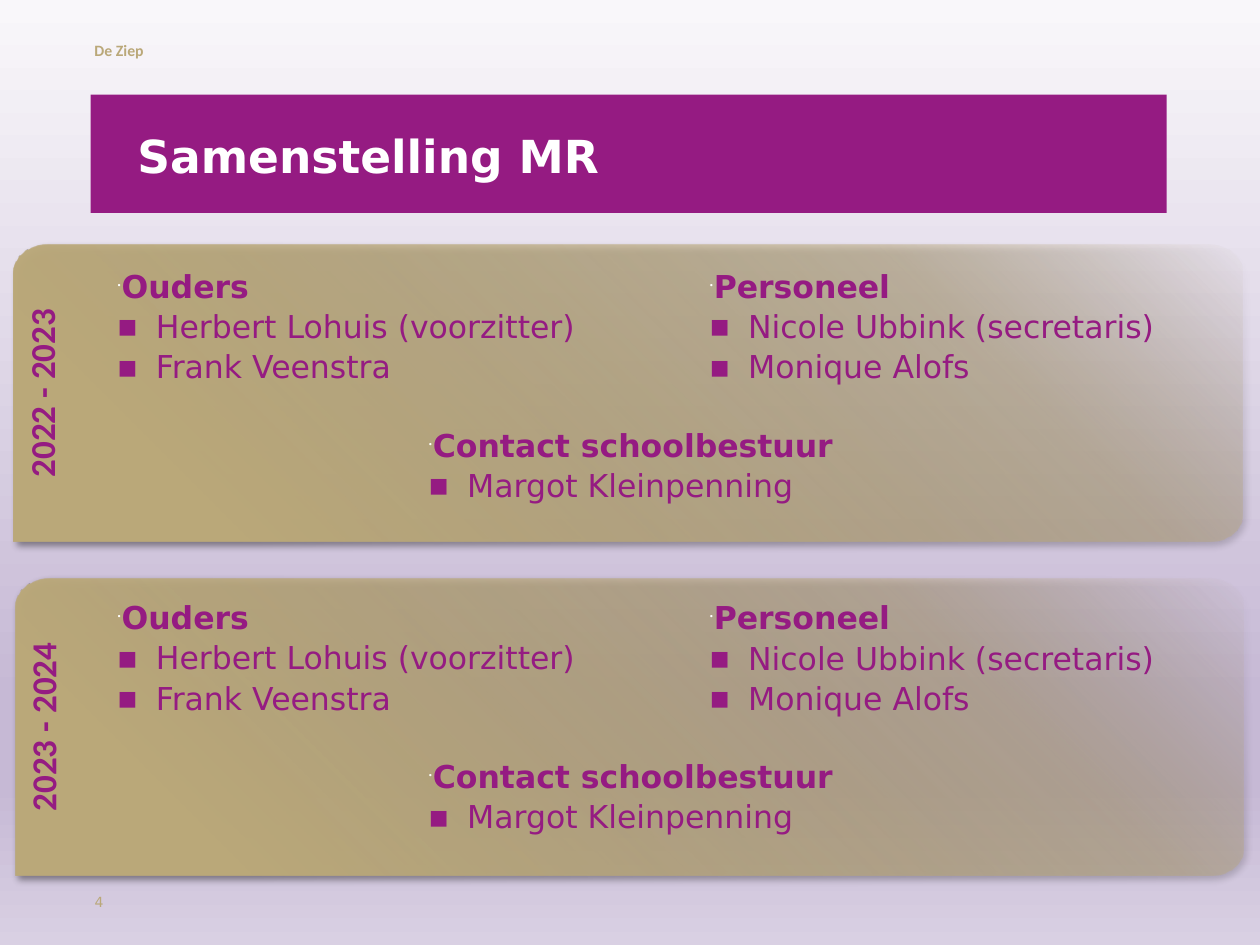
from dataclasses import dataclass
from math import cos, pi, sin

from lxml.etree import SubElement
from pptx import Presentation
from pptx.dml.color import RGBColor
from pptx.enum.text import MSO_ANCHOR, MSO_AUTO_SIZE, PP_ALIGN
from pptx.oxml import parse_xml
from pptx.oxml.ns import nsdecls, qn
from pptx.util import Inches, Pt


@dataclass(frozen=True)
class Theme:
    purple: str = "951B82"
    gold: str = "BAA879"
    white: str = "FFFFFF"
    black: str = "000000"
    label_font: str = "Calibri"
    body_font: str = "DejaVu Sans"
    title_size: int = 26
    year_size: int = 20
    body_size: int = 18
    header_size: int = 9
    number_size: int = 8
    body_line: int = 23


@dataclass(frozen=True)
class Stop:
    position: int
    color: str
    opacity: int = 100


@dataclass(frozen=True)
class Group:
    heading: str
    members: tuple[str, ...]
    left: float
    offset: float
    width: float
    height: float


@dataclass(frozen=True)
class Panel:
    years: str
    left: float
    top: float
    groups_top: float


THEME = Theme()
PANEL_WIDTH, PANEL_HEIGHT = 9.75, 2.36
CORNER_WIDTH, CORNER_HEIGHT = 0.27, 0.22
BACKGROUND = (Stop(0, "F9F7FA"), Stop(74, "C6B9D5"), Stop(83, "C6B9D5"), Stop(100, "D9D0E3"))
PANEL_FILL = (Stop(15, THEME.gold), Stop(76, THEME.gold, 50), Stop(100, THEME.gold, 0))
DOWNWARD = '<a:lin ang="5400000" scaled="0"/>'
FROM_BOTTOM_LEFT = '<a:path path="circle"><a:fillToRect t="100000" r="100000"/></a:path>'
PANELS = (
    Panel("2022 - 2023", 0.11, 1.94, 2.05),
    Panel("2023 - 2024", 0.12, 4.59, 4.68),
)
GROUPS = (
    Group("Ouders", ("Herbert Lohuis (voorzitter)", "Frank Veenstra"), 0.83, 0, 3.9, 1.07),
    Group("Personeel", ("Nicole Ubbink (secretaris)", "Monique Alofs"), 5.53, 0, 3.9, 1.28),
    Group("Contact schoolbestuur", ("Margot Kleinpenning",), 3.3, 1.26, 4.08, 1.01),
)


def write(paragraph, text: str, *, size: int, color: str, font: str,
          bold: bool = False, align=PP_ALIGN.LEFT):
    run = paragraph.add_run()
    run.text = text
    run.font.size = Pt(size)
    run.font.name = font
    run.font.bold = bold
    run.font.color.rgb = RGBColor.from_string(color)
    paragraph.alignment = align
    return run


def set_margins(frame, left: float, top: float, right: float, bottom: float) -> None:
    frame.margin_left, frame.margin_top = Inches(left), Inches(top)
    frame.margin_right, frame.margin_bottom = Inches(right), Inches(bottom)


def add_text_box(slide, left: float, top: float, width: float, height: float):
    frame = slide.shapes.add_textbox(
        Inches(left), Inches(top), Inches(width), Inches(height)).text_frame
    frame.word_wrap = True
    return frame


def apply_gradient(fill, parent, stops: tuple[Stop, ...], direction: str) -> None:
    """Put a gradient where the solid fill of parent would be."""
    fill.solid()
    stop_xml = "".join(
        f'<a:gs pos="{stop.position * 1000}"><a:srgbClr val="{stop.color}">'
        f'<a:alpha val="{stop.opacity * 1000}"/></a:srgbClr></a:gs>' for stop in stops)
    gradient = parse_xml(
        f'<a:gradFill {nsdecls("a")} rotWithShape="1"><a:gsLst>{stop_xml}</a:gsLst>'
        f'{direction}</a:gradFill>')
    parent.replace(parent.find(qn("a:solidFill")), gradient)


def add_bullet(paragraph, character: str, color: str, *, percent: int = 100,
               indent: float = 0) -> None:
    properties = paragraph._p.get_or_add_pPr()
    properties.set("marL", str(Inches(indent)))
    properties.set("indent", str(-Inches(indent)))
    SubElement(SubElement(properties, qn("a:buClr")), qn("a:srgbClr")).set("val", color)
    SubElement(properties, qn("a:buSzPct")).set("val", str(percent * 1000))
    SubElement(properties, qn("a:buFont")).set("typeface", THEME.body_font)
    SubElement(properties, qn("a:buChar")).set("char", character)


def panel_outline(panel: Panel) -> list[tuple[int, int]]:
    """Points clockwise from the bottom left, the one square corner."""
    right, bottom = panel.left + PANEL_WIDTH, panel.top + PANEL_HEIGHT
    inner_left, inner_right = panel.left + CORNER_WIDTH, right - CORNER_WIDTH
    inner_top, inner_bottom = panel.top + CORNER_HEIGHT, bottom - CORNER_HEIGHT
    corners = ((inner_left, inner_top, pi), (inner_right, inner_top, 1.5 * pi),
               (inner_right, inner_bottom, 0))
    steps = 12
    points = [(panel.left, bottom)]
    for x, y, start in corners:
        for step in range(steps + 1):
            angle = start + step * pi / 2 / steps
            points.append((x + CORNER_WIDTH * cos(angle), y + CORNER_HEIGHT * sin(angle)))
    return [(Inches(x), Inches(y)) for x, y in points]


def add_panel(slide, panel: Panel) -> None:
    start, *others = panel_outline(panel)
    builder = slide.shapes.build_freeform(*start)
    builder.add_line_segments(others, close=True)
    shape = builder.convert_to_shape()
    properties = shape._element.spPr
    apply_gradient(shape.fill, properties, PANEL_FILL, FROM_BOTTOM_LEFT)
    shape.line.fill.background()
    shape.shadow.inherit = False
    properties.find(qn("a:effectLst")).append(parse_xml(
        f'<a:outerShdw {nsdecls("a")} blurRad="{Pt(4)}" dist="{Pt(3)}" dir="2700000" '
        f'algn="tl" rotWithShape="0"><a:srgbClr val="{THEME.black}">'
        '<a:alpha val="40000"/></a:srgbClr></a:outerShdw>'))

    frame = shape.text_frame
    frame._txBody.bodyPr.set("vert", "vert270")
    frame.vertical_anchor = MSO_ANCHOR.TOP
    set_margins(frame, 0.1, 0.05, 0.1, 0.05)
    run = write(frame.paragraphs[0], panel.years, size=THEME.year_size, color=THEME.purple,
                font=THEME.label_font, bold=True, align=PP_ALIGN.CENTER)
    run._r.get_or_add_rPr().insert(0, parse_xml(
        f'<a:ln {nsdecls("a")} w="{Pt(0.75)}"><a:solidFill>'
        f'<a:srgbClr val="{THEME.purple}"/></a:solidFill></a:ln>'))


def add_group(slide, group: Group, top: float) -> None:
    frame = add_text_box(slide, group.left, top + group.offset, group.width, group.height)
    for index, text in enumerate((group.heading, *group.members)):
        is_heading = index == 0
        paragraph = frame.paragraphs[0] if is_heading else frame.add_paragraph()
        if is_heading:
            add_bullet(paragraph, "•", THEME.white, percent=25)
        else:
            add_bullet(paragraph, "▪", THEME.purple, indent=0.31)
        paragraph.line_spacing = Pt(THEME.body_line)
        write(paragraph, text, size=THEME.body_size, color=THEME.purple,
              font=THEME.body_font, bold=is_heading)


def format_title(title, text: str) -> None:
    title.left, title.top = Inches(0.72), Inches(0.75)
    title.width, title.height = Inches(8.54), Inches(0.94)
    title.fill.solid()
    title.fill.fore_color.rgb = RGBColor.from_string(THEME.purple)
    frame = title.text_frame
    frame.auto_size = MSO_AUTO_SIZE.NONE
    frame.vertical_anchor = MSO_ANCHOR.MIDDLE
    set_margins(frame, 0.37, 0.08, 0.28, 0.05)
    write(frame.paragraphs[0], text, size=THEME.title_size, color=THEME.white,
          font=THEME.body_font, bold=True)


def main() -> None:
    presentation = Presentation()
    presentation.slide_width, presentation.slide_height = Inches(10), Inches(7.5)
    slide = presentation.slides.add_slide(presentation.slide_layouts[5])
    background_fill = slide.background.fill
    background_fill.solid()
    apply_gradient(background_fill, slide.element.find(".//" + qn("p:bgPr")),
                   BACKGROUND, DOWNWARD)

    header = add_text_box(slide, 0.75, 0.27, 7.87, 0.25)
    set_margins(header, 0, 0.05, 0, 0.05)
    write(header.paragraphs[0], "De Ziep", size=THEME.header_size, color=THEME.gold,
          font=THEME.label_font, bold=True)
    format_title(slide.shapes.title, "Samenstelling MR")
    for panel in PANELS:
        add_panel(slide, panel)
        for group in GROUPS:
            add_group(slide, group, panel.groups_top)
    number = add_text_box(slide, 0.75, 7.06, 0.31, 0.2)
    set_margins(number, 0, 0.05, 0, 0.05)
    number.vertical_anchor = MSO_ANCHOR.MIDDLE
    write(number.paragraphs[0], "4", size=THEME.number_size, color=THEME.gold,
          font=THEME.body_font)
    presentation.save("out.pptx")


if __name__ == "__main__":
    main()
